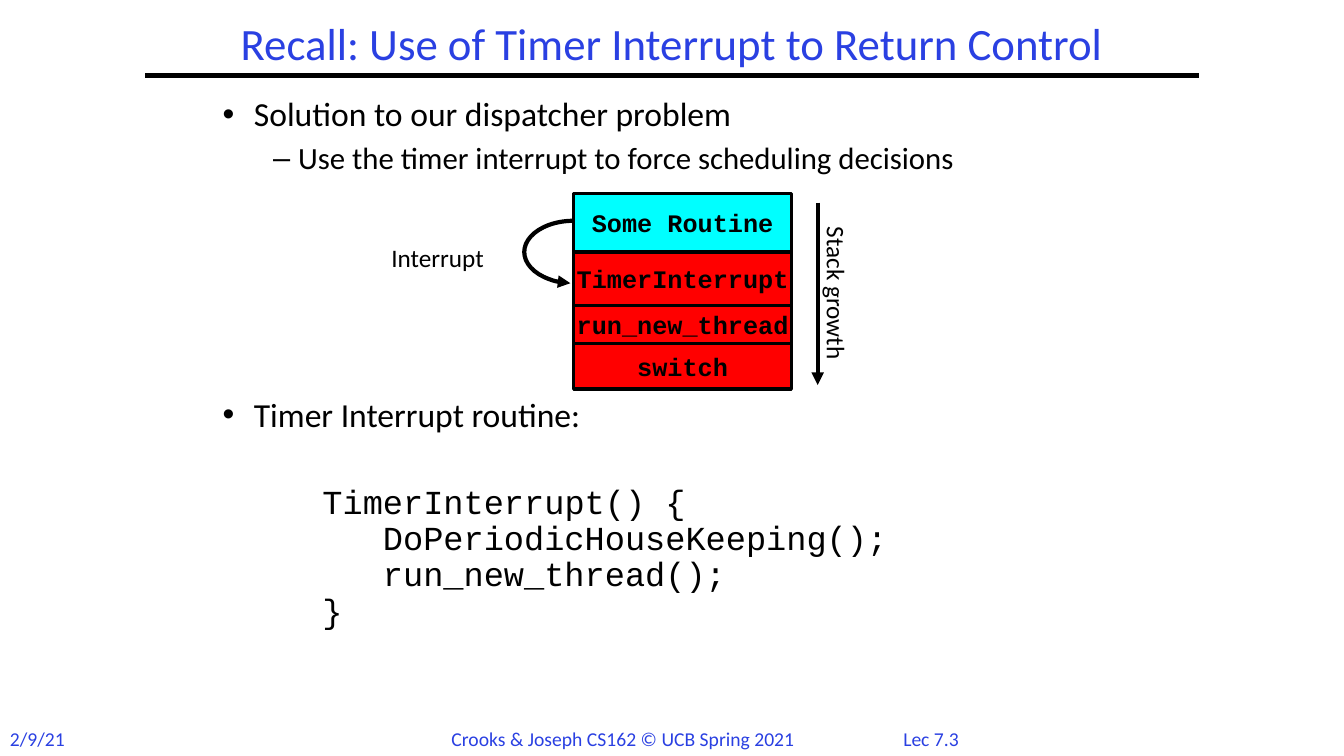
from dataclasses import dataclass

from lxml.etree import SubElement
from pptx import Presentation
from pptx.dml.color import RGBColor
from pptx.enum.shapes import MSO_CONNECTOR, MSO_SHAPE
from pptx.enum.text import MSO_ANCHOR, MSO_AUTO_SIZE, PP_ALIGN
from pptx.oxml.ns import qn
from pptx.util import Inches, Pt


@dataclass(frozen=True)
class Theme:
    blue: str = "2A40E2"
    black: str = "000000"
    cyan: str = "00FFFF"
    red: str = "FF0000"
    sans: str = "Calibri"
    mono: str = "Courier New"
    title: int = 32
    body: int = 24
    sub: int = 22
    label: int = 18
    footer: int = 14
    rule: float = 3
    border: float = 2.25


class SlideBuilder:
    def __init__(self, prs, theme):
        self.theme = theme
        self.s = prs.slides.add_slide(prs.slide_layouts[5])

    def style(self, p, size, color=None, font=None, bold=False):
        for r in p.runs:
            r.font.size = Pt(size)
            r.font.name = font or self.theme.sans
            r.font.bold = bold
            r.font.color.rgb = RGBColor.from_string(color or self.theme.black)

    def title(self, text, x, y, w, h):
        sp = self.s.shapes.title
        sp.left, sp.top, sp.width, sp.height = map(Inches, (x, y, w, h))
        tf = sp.text_frame
        tf.text = text
        tf.auto_size = MSO_AUTO_SIZE.NONE
        tf.vertical_anchor = MSO_ANCHOR.MIDDLE
        p = tf.paragraphs[0]
        p.alignment, p.line_spacing = PP_ALIGN.CENTER, 0.9
        self.style(p, self.theme.title, self.theme.blue)

    def text_box(self, text, x, y, w, h, wrap=True):
        sp = self.s.shapes.add_textbox(*map(Inches, (x, y, w, h)))
        sp.text_frame.word_wrap = wrap
        sp.text_frame.text = text
        return sp

    def label(self, text, x, y, w, h, size, color=None,
              align=PP_ALIGN.CENTER, rotation=0):
        sp = self.text_box(text, x, y, w, h, wrap=False)
        sp.rotation = rotation
        p = sp.text_frame.paragraphs[0]
        p.alignment = align
        self.style(p, size, color)

    def bullets(self, items, x, y, w, h):
        """Each item is (text, level)."""
        levels = [("•", 0.31, 0.31, self.theme.body),
                  ("–", 0.75, 0.25, self.theme.sub)]
        tf = self.text_box("\n".join(t for t, _ in items), x, y, w, h).text_frame
        for p, (_, level) in zip(tf.paragraphs, items):
            mark, margin, hanging, size = levels[level]
            p.level, p.line_spacing = level, 0.9
            p.space_before = Pt(round(size * 0.3, 1))
            pPr = p._p.get_or_add_pPr()
            pPr.set("marL", str(Inches(margin)))
            pPr.set("indent", str(-Inches(hanging)))
            SubElement(pPr, qn("a:buFont"), typeface="Arial")
            SubElement(pPr, qn("a:buChar"), char=mark)
            self.style(p, size)

    def code(self, lines, x, y, w, h):
        """Each line is (text, indent in inches)."""
        tf = self.text_box("\n".join(t for t, _ in lines), x, y, w, h).text_frame
        for p, (_, indent) in zip(tf.paragraphs, lines):
            p.line_spacing = Pt(25.9)
            p._p.get_or_add_pPr().set("marL", str(Inches(indent)))
            self.style(p, self.theme.body, font=self.theme.mono)

    def frame(self, text, x, y, w, h, fill):
        sp = self.s.shapes.add_shape(MSO_SHAPE.RECTANGLE,
                                     *map(Inches, (x, y, w, h)))
        sp.shadow.inherit = False
        sp.fill.solid()
        sp.fill.fore_color.rgb = RGBColor.from_string(fill)
        self.stroke(sp, self.theme.border)
        tf = sp.text_frame
        tf.text = text
        tf.word_wrap = False
        tf.vertical_anchor = MSO_ANCHOR.MIDDLE
        p = tf.paragraphs[0]
        p.alignment = PP_ALIGN.CENTER
        self.style(p, self.theme.label, font=self.theme.mono, bold=True)

    def stroke(self, sp, width, arrow=None):
        sp.line.width = Pt(width)
        sp.line.color.rgb = RGBColor.from_string(self.theme.black)
        if arrow:
            SubElement(sp.line._get_or_add_ln(), qn(f"a:{arrow}"), type="triangle")

    def line(self, x1, y1, x2, y2, arrow=None):
        c = self.s.shapes.add_connector(MSO_CONNECTOR.STRAIGHT,
                                        *map(Inches, (x1, y1, x2, y2)))
        self.stroke(c, self.theme.rule, arrow)
        SubElement(c._element.spPr, qn("a:effectLst"))

    def arc_arrow(self, x, y, w, h, start, end):
        """Clockwise arc between two angles, arrowhead at the start."""
        sp = self.s.shapes.add_shape(MSO_SHAPE.ARC, *map(Inches, (x, y, w, h)))
        sp.adjustments[0] = start * 0.6
        sp.adjustments[1] = end * 0.6
        sp.fill.background()
        self.stroke(sp, self.theme.rule, "headEnd")
        sp.shadow.inherit = False


def main():
    theme = Theme()
    prs = Presentation()
    prs.slide_width, prs.slide_height = Inches(13.33), Inches(7.5)
    b = SlideBuilder(prs, theme)

    # Title and rule
    b.line(1.44, 0.75, 11.89, 0.75)
    b.title("Recall: Use of Timer Interrupt to Return Control",
            1.83, 0.17, 9.67, 0.58)

    # Footer
    for text, x, w, align in [
        ("2/9/21", 0, 0.8, PP_ALIGN.LEFT),
        ("Crooks & Joseph CS162 © UCB Spring 2021", 4.38, 3.76, PP_ALIGN.LEFT),
        ("Lec 7.3", 8.75, 0.97, PP_ALIGN.CENTER),
    ]:
        b.label(text, x, 7.16, w, 0.34, theme.footer, theme.blue, align)

    # Bullets and code
    b.bullets([("Solution to our dispatcher problem", 0),
               ("Use the timer interrupt to force scheduling decisions", 1)],
              2.11, 0.92, 9, 0.95)
    b.bullets([("Timer Interrupt routine:", 0)], 2.11, 3.9, 9, 0.5)
    b.code([("TimerInterrupt() {", 0),
            ("DoPeriodicHouseKeeping();", 0.6),
            ("run_new_thread();", 0.6),
            ("}", 0)], 3.1, 4.76, 8, 1.6)

    # Stack frames, top to bottom
    top = 1.92
    for text, height, fill in [
        ("Some Routine", 0.58, theme.cyan),
        ("TimerInterrupt", 0.53, theme.red),
        ("run_new_thread", 0.38, theme.red),
        ("switch", 0.45, theme.red),
    ]:
        b.frame(text, 5.69, top, 2.16, height, fill)
        top += height

    # Interrupt and growth arrows
    b.arc_arrow(5.2, 2.19, 0.98, 0.62, 96, 270)
    b.label("Interrupt", 3.77, 2.35, 1.14, 0.4, theme.label)
    b.line(8.11, 2.01, 8.11, 3.82, "tailEnd")
    b.label("Stack growth", 7.47, 2.71, 1.66, 0.4, theme.label, rotation=90)

    prs.save("out.pptx")


if __name__ == "__main__":
    main()
